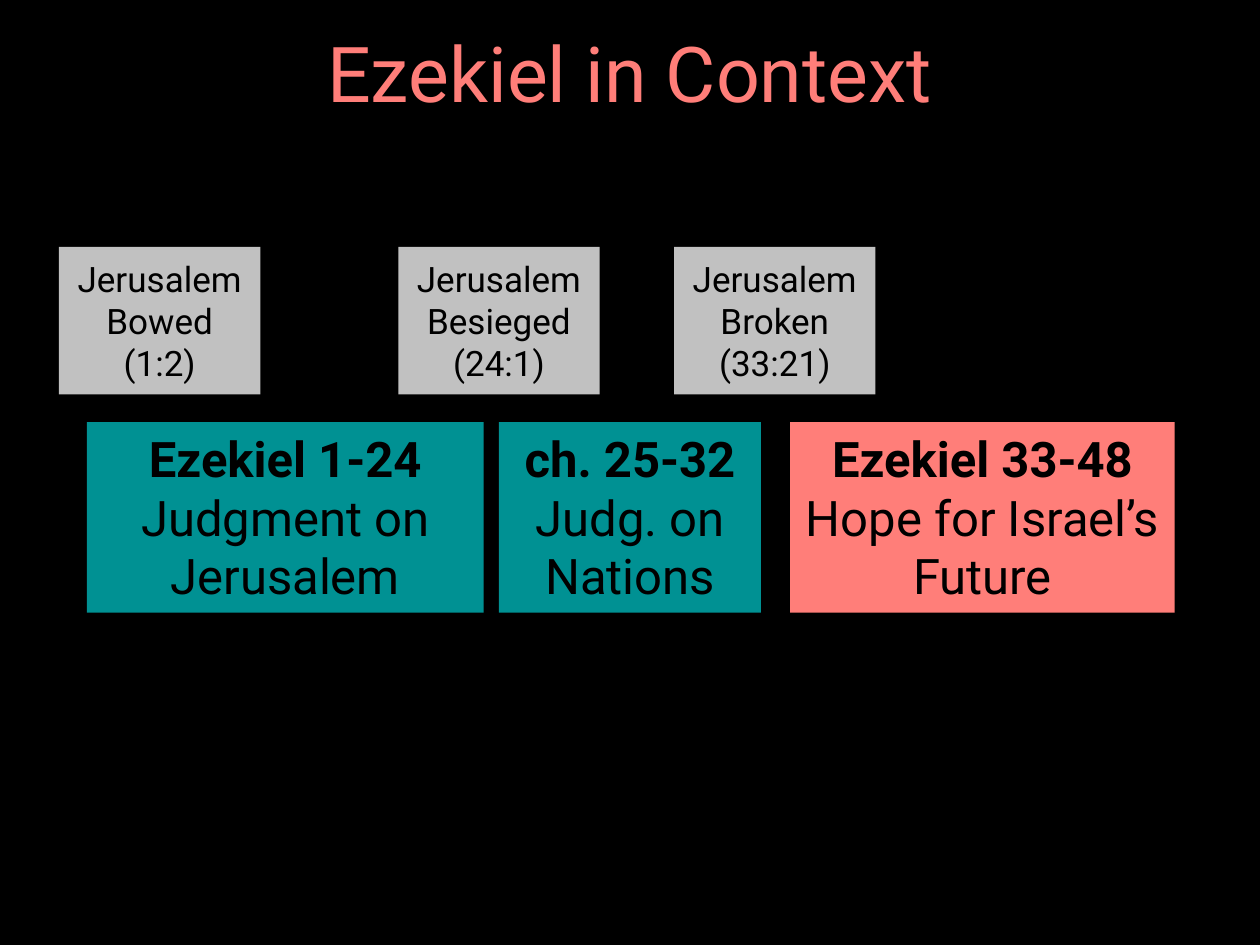
from dataclasses import dataclass

from pptx import Presentation
from pptx.dml.color import RGBColor
from pptx.enum.shapes import MSO_SHAPE as Shape
from pptx.enum.text import MSO_ANCHOR as Anchor, PP_ALIGN as Align
from pptx.util import Cm, Pt


@dataclass(frozen=True)
class Theme:
    """Colours, font and type sizes of the slide."""
    font: str = "Roboto"
    black: RGBColor = RGBColor(0x00, 0x00, 0x00)
    coral: RGBColor = RGBColor(0xFF, 0x7E, 0x79)
    teal: RGBColor = RGBColor(0x00, 0x91, 0x93)
    grey: RGBColor = RGBColor(0xC1, 0xC1, 0xC1)
    title_size: int = 44
    section_size: int = 28
    event_size: int = 20


THEME = Theme()

EVENTS = [
    (0, "Jerusalem Bowed", "(1:2)"),
    (6.84, "Jerusalem Besieged", "(24:1)"),
    (12.4, "Jerusalem Broken", "(33:21)"),
]
SECTIONS = [
    (0, 8, THEME.teal, "Ezekiel 1-24", "Judgment on Jerusalem"),
    (8.31, 5.28, THEME.teal, "ch. 25-32", "Judg. on Nations"),
    (14.18, 7.75, THEME.coral, "Ezekiel 33-48", "Hope for Israel’s Future"),
]


def write_lines(frame, lines, size, color, anchor, bold_first=False):
    """Fill a text frame with centred paragraphs."""
    frame.word_wrap = True
    frame.vertical_anchor = anchor
    for index, line in enumerate(lines):
        paragraph = frame.add_paragraph() if index else frame.paragraphs[0]
        paragraph.text = line
        paragraph.alignment = Align.CENTER
        font = paragraph.font
        font.name, font.size, font.color.rgb = THEME.font, Pt(size), color
        font.bold = bold_first and index == 0


def add_block(slide, left, top, width, height, fill):
    """Add a plain filled rectangle and return its text frame."""
    shape = slide.shapes.add_shape(Shape.RECTANGLE, Cm(left), Cm(top), Cm(width), Cm(height))
    shape.shadow.inherit = False
    shape.fill.solid()
    shape.fill.fore_color.rgb = fill
    shape.line.fill.background()
    return shape.text_frame


def add_title(slide, left, top, width, height):
    """Place the slide title."""
    frame = slide.shapes.add_textbox(Cm(left), Cm(top), Cm(width), Cm(height)).text_frame
    write_lines(frame, ["Ezekiel in Context"], THEME.title_size, THEME.coral, Anchor.MIDDLE)
    frame.paragraphs[0].line_spacing = 0.9


def add_events(slide, left, top, width, height):
    """Place the equal boxes for the stages of Jerusalem's fall."""
    for offset, *lines in EVENTS:
        frame = add_block(slide, left + offset, top, width, height, THEME.grey)
        write_lines(frame, lines, THEME.event_size, THEME.black, Anchor.MIDDLE)


def add_sections(slide, left, top, height):
    """Place the row of boxes for the sections of the book."""
    for offset, width, fill, *lines in SECTIONS:
        frame = add_block(slide, left + offset, top, width, height, fill)
        write_lines(frame, lines, THEME.section_size, THEME.black, Anchor.TOP, bold_first=True)


def main():
    """Build and save the presentation."""
    presentation = Presentation()
    presentation.slide_width, presentation.slide_height = Cm(25.4), Cm(19.05)
    slide = presentation.slides.add_slide(presentation.slide_layouts[6])
    slide.background.fill.solid()
    slide.background.fill.fore_color.rgb = THEME.black
    add_title(slide, 1.75, 0.41, 21.9, 2.29)
    add_sections(slide, 1.75, 8.51, 3.84)
    add_events(slide, 1.19, 4.98, 4.06, 2.97)
    presentation.save("out.pptx")


if __name__ == "__main__":
    main()
